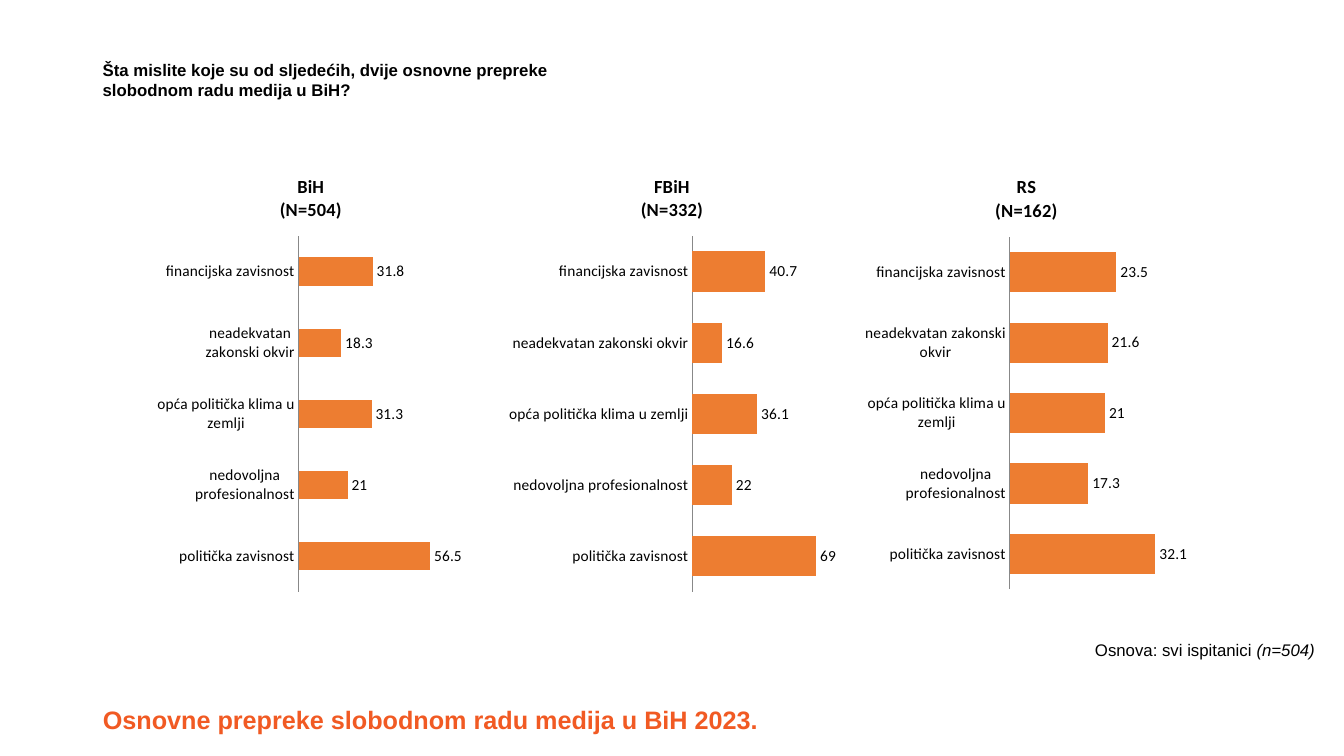
"""Build a slide with three bar charts on obstacles to free media work in BiH."""
import pptx
import pptx.chart.data
import pptx.dml.color
import pptx.enum.chart
import pptx.enum.text
import pptx.util
from lxml import etree
from pptx.util import Inches

COLORS = {"title": "F15A23", "text": "000000", "bar": "ED7D31", "axis": "888888"}
CATEGORIES = [
    "politička zavisnost",
    "nedovoljna profesionalnost",
    "opća politička klima u zemlji",
    "neadekvatan zakonski okvir",
    "financijska zavisnost",
]
CHARTS = [
    {"title": "BiH\n(N=504)", "box": (1.56, 1.55, 3.03, 4.41), "gap": 150, "maximum": 60,
     "values": (56.5, 21, 31.3, 18.3, 31.8), "plot": (0.46, 0.18, 0.46, 0.8)},
    {"title": "FBiH\n(N=332)", "box": (4.97, 1.55, 3.39, 4.41), "gap": 75, "maximum": 80,
     "values": (69, 22, 36.1, 16.6, 40.7), "plot": (0.56, 0.18, 0.42, 0.8)},
    {"title": "RS\n(N=162)", "box": (8.54, 1.55, 3.28, 4.72), "gap": 75, "maximum": 35,
     "values": (32.1, 17.3, 21, 21.6, 23.5), "plot": (0.45, 0.17, 0.48, 0.74)},
]
ALIGN = pptx.enum.text.PP_ALIGN
TICK = pptx.enum.chart.XL_TICK_MARK.NONE


def format_font(font, color, **values):
    for name, value in values.items():
        setattr(font, name, value)
    font.color.rgb = pptx.dml.color.RGBColor.from_string(COLORS[color])


def fill_text(shape, box, lines, alignment, color, size, bold):
    shape.left, shape.top, shape.width, shape.height = map(Inches, box)
    frame = shape.text_frame
    frame.word_wrap = True
    frame.auto_size = pptx.enum.text.MSO_AUTO_SIZE.NONE
    for index, line in enumerate(lines):
        paragraph = frame.add_paragraph() if index else frame.paragraphs[0]
        paragraph.alignment = alignment
        for text, italic in line:
            run = paragraph.add_run()
            run.text = text
            format_font(run.font, color, name="Arial", size=pptx.util.Pt(size),
                        bold=bold, italic=italic)


presentation = pptx.Presentation()
presentation.slide_width = Inches(13.33)
presentation.slide_height = Inches(7.5)
slide = presentation.slides.add_slide(presentation.slide_layouts[5])

fill_text(slide.shapes.title, (0.92, 6.94, 9.52, 0.4),
          [[("Osnovne prepreke slobodnom radu medija u BiH 2023.", False)]],
          ALIGN.LEFT, "title", 18, True)

base_box = (0.92, 6.3, 12.22, 0.5)
base_note = slide.shapes.add_textbox(*map(Inches, base_box))
fill_text(base_note, base_box, [[("Osnova: svi ispitanici ", False), ("(n=504)", True)]],
          ALIGN.RIGHT, "text", 12, False)

question_box = (0.92, 0.54, 11.23, 0.5)
question = slide.shapes.add_textbox(*map(Inches, question_box))
fill_text(question, question_box,
          [[("Šta mislite koje su od sljedećih, dvije osnovne prepreke", False)],
           [("slobodnom radu medija u BiH?", False)]],
          ALIGN.LEFT, "text", 12, True)

for details in CHARTS:
    data = pptx.chart.data.CategoryChartData()
    data.categories = CATEGORIES
    data.add_series("Series 1", details["values"])
    chart = slide.shapes.add_chart(
        pptx.enum.chart.XL_CHART_TYPE.BAR_CLUSTERED,
        *map(Inches, details["box"]), data).chart
    chart.has_legend = False
    format_font(chart.font, "text", name="Calibri", size=pptx.util.Pt(11))

    chart.chart_title.text_frame.text = details["title"]
    chart.chart_title.include_in_layout = False
    for paragraph in chart.chart_title.text_frame.paragraphs:
        format_font(paragraph.runs[0].font, "text", name="Calibri",
                    size=pptx.util.Pt(13.2), bold=True)

    category_axis, value_axis = chart.category_axis, chart.value_axis
    category_axis.major_tick_mark = TICK
    category_axis.minor_tick_mark = TICK
    category_axis.format.line.color.rgb = pptx.dml.color.RGBColor.from_string(COLORS["axis"])
    category_axis.format.line.width = pptx.util.Pt(0.75)
    value_axis.visible = False
    value_axis.has_major_gridlines = False
    value_axis.minimum_scale = 0
    value_axis.maximum_scale = details["maximum"]

    plot = chart.plots[0]
    plot.gap_width = details["gap"]
    plot.overlap = -25
    plot.vary_by_categories = False
    plot.has_data_labels = True
    labels = plot.data_labels
    labels.show_value = True
    labels.number_format = "General"
    labels.number_format_is_linked = False
    labels.position = pptx.enum.chart.XL_LABEL_POSITION.OUTSIDE_END
    format_font(labels.font, "text", name="Calibri", size=pptx.util.Pt(11))
    fill = plot.series[0].format.fill
    fill.solid()
    fill.fore_color.rgb = pptx.dml.color.RGBColor.from_string(COLORS["bar"])

    plot_area = chart.element.chart.plotArea
    namespace = "{%s}" % plot_area.nsmap["c"]
    for old_layout in plot_area.findall(namespace + "layout"):
        plot_area.remove(old_layout)
    layout = etree.Element(namespace + "layout")
    manual = etree.SubElement(layout, namespace + "manualLayout")
    settings = [("layoutTarget", "inner"), ("xMode", "edge"), ("yMode", "edge")]
    settings += zip("xywh", details["plot"])
    for tag, value in settings:
        etree.SubElement(manual, namespace + tag, val=str(value))
    plot_area.insert(0, layout)

presentation.save("out.pptx")
